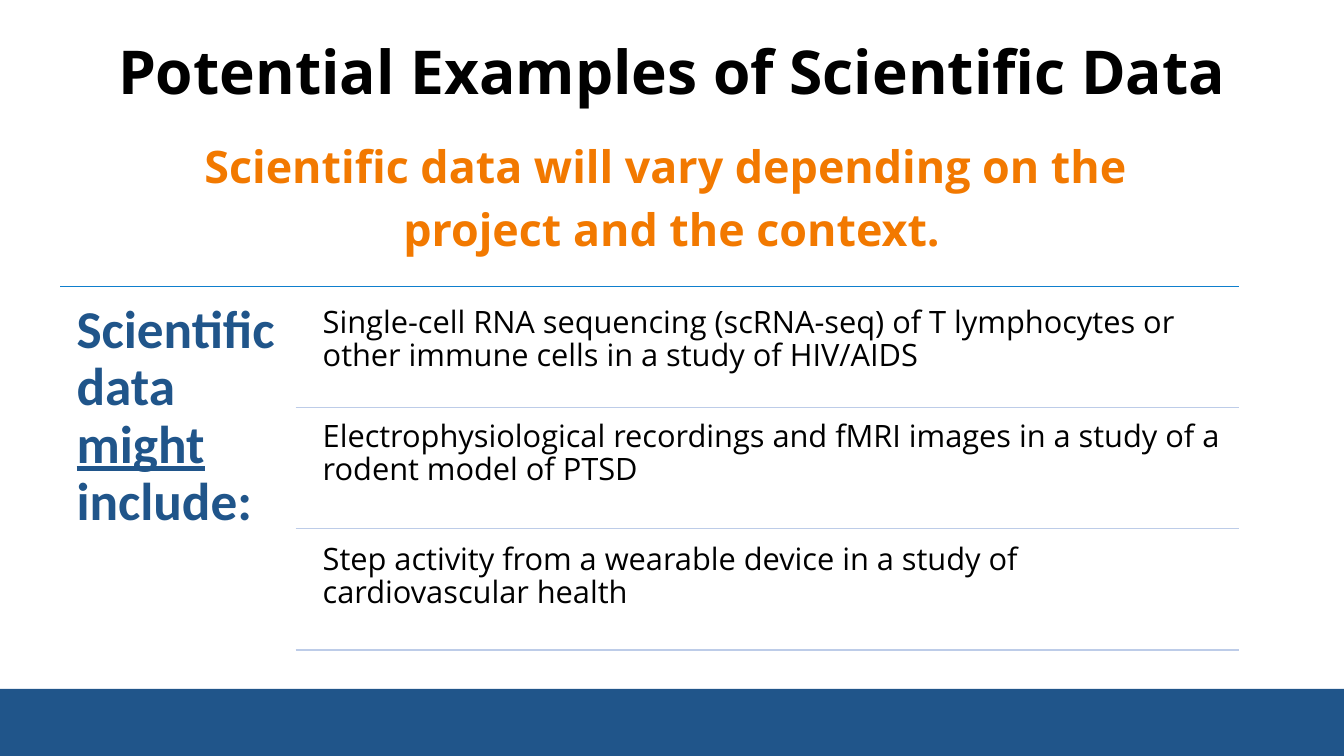
import pptx
import pptx.util
import pptx.dml.color
import pptx.enum.shapes
import pptx.enum.text
import pptx.oxml.ns
from lxml import etree

Pt = pptx.util.Pt
RGBColor = pptx.dml.color.RGBColor
Align = pptx.enum.text.PP_ALIGN
Anchor = pptx.enum.text.MSO_ANCHOR
qn = pptx.oxml.ns.qn

NAVY = RGBColor(0x20, 0x55, 0x8A)
ORANGE = RGBColor(0xF2, 0x79, 0x00)
BLACK = RGBColor(0x00, 0x00, 0x00)
BLUE = RGBColor(0x0F, 0x7F, 0xCD)
PALE = RGBColor(0xBD, 0xCC, 0xE8)

TITLE = {"name": "Open Sans", "size": Pt(43.2), "bold": True, "color": BLACK}
LEAD = {"name": "Open Sans", "size": Pt(32), "bold": True, "color": ORANGE}
LABEL = {"name": "Calibri", "size": Pt(38), "bold": True, "color": NAVY}
ITEM = {"name": "Open Sans", "size": Pt(22), "bold": False, "color": BLACK}

LEFT, RIGHT = 43.2, 884.9
ITEM_LEFT, RULE_LEFT = 223.9, 211.2
TOP, ROW = 204.5, 86.6
ITEMS = [
    (212.4, "Single-cell RNA sequencing (scRNA-seq) of T lymphocytes or "
            "other immune cells in a study of HIV/AIDS"),
    (293.8, "Electrophysiological recordings and fMRI images in a study of a "
            "rodent model of PTSD"),
    (381.6, "Step activity from a wearable device in a study of "
            "cardiovascular health"),
]


class Slide:
    """Holds the current slide and draws elements on it, lengths in points."""

    def __init__(self, prs):
        self.s = prs.slides.add_slide(prs.slide_layouts[1])

    def fill_text(self, sp, paragraphs, style, align, gap=0, inset=None,
                  anchor=Anchor.TOP):
        """Each paragraph is a list of (text, underlined) runs."""
        tf = sp.text_frame
        tf.word_wrap = True
        tf.auto_size = pptx.enum.text.MSO_AUTO_SIZE.NONE
        tf.vertical_anchor = anchor
        if inset is not None:
            for side in ("left", "top", "right", "bottom"):
                setattr(tf, f"margin_{side}", Pt(inset))
        for i, runs in enumerate(paragraphs):
            p = tf.add_paragraph() if i else tf.paragraphs[0]
            p.alignment, p.line_spacing = align, 0.9
            p.space_before = Pt(gap if i else 0)
            for text, underlined in runs:
                r = p.add_run()
                r.text = text
                r.font.underline = underlined
                for key, value in style.items():
                    if key == "color":
                        r.font.color.rgb = value
                    else:
                        setattr(r.font, key, value)

    def placeholder(self, idx, box, lines, style, **layout):
        sp = self.s.placeholders[idx]
        sp.left, sp.top, sp.width, sp.height = map(Pt, box)
        self.fill_text(sp, [[(line, False)] for line in lines], style,
                       Align.CENTER, **layout)
        return sp

    def text(self, box, runs, style, inset):
        sp = self.s.shapes.add_textbox(*map(Pt, box))
        self.fill_text(sp, [runs], style, Align.LEFT, inset=inset)

    def rule(self, left, y, color):
        sp = self.s.shapes.add_connector(
            pptx.enum.shapes.MSO_CONNECTOR.STRAIGHT,
            Pt(left), Pt(y), Pt(RIGHT), Pt(y))
        sp.line.color.rgb = color
        sp.line.width = Pt(1)
        etree.SubElement(sp._element.spPr, qn("a:effectLst"))

    def band(self, box, color):
        sp = self.s.shapes.add_shape(
            pptx.enum.shapes.MSO_SHAPE.RECTANGLE, *map(Pt, box))
        sp.shadow.inherit = False
        sp.fill.solid()
        sp.fill.fore_color.rgb = color
        sp.line.fill.background()


def remove_bullets(sp):
    for p in sp.text_frame.paragraphs:
        pPr = p._p.get_or_add_pPr()
        pPr.set("marL", "0")
        pPr.set("indent", "0")
        etree.SubElement(pPr, qn("a:buNone"))


def main():
    prs = pptx.Presentation()
    prs.slide_width, prs.slide_height = Pt(960), Pt(540)
    slide = Slide(prs)

    slide.band((0, 492, 960, 48), NAVY)
    slide.placeholder(0, (66, 1.4, 828, 104.4),
                      ["Potential Examples of Scientific Data"], TITLE,
                      anchor=Anchor.MIDDLE)
    lead = slide.placeholder(1, (66, 100, 828, 90.7),
                             ["Scientific data will vary depending on the ",
                              "project and the context."], LEAD, gap=10)
    remove_bullets(lead)

    slide.rule(LEFT, TOP, BLUE)
    slide.text((LEFT, TOP, 168.5, 263.5),
               [("Scientific data ", False), ("might", True),
                (" include:", False)], LABEL, inset=11.5)
    for i, (top, item) in enumerate(ITEMS, start=1):
        slide.text((ITEM_LEFT, top, RIGHT - ITEM_LEFT, 82.8),
                   [(item, False)], ITEM, inset=6.6)
        slide.rule(RULE_LEFT, TOP + i * ROW, PALE)

    prs.save("out.pptx")


if __name__ == "__main__":
    main()
